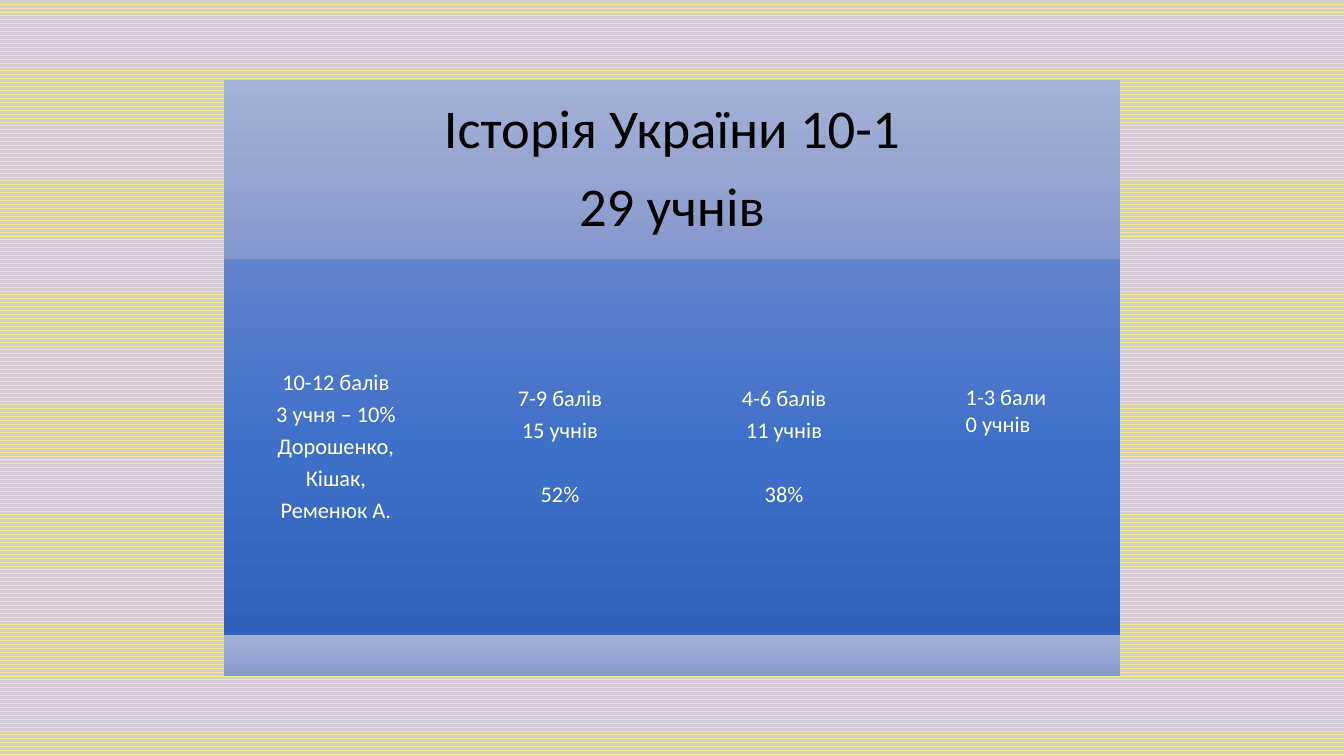
from copy import deepcopy
from dataclasses import dataclass

from pptx import Presentation
from pptx.dml.color import RGBColor
from pptx.enum.dml import MSO_PATTERN
from pptx.enum.shapes import MSO_SHAPE
from pptx.enum.text import MSO_ANCHOR, MSO_AUTO_SIZE, PP_ALIGN
from pptx.oxml.ns import qn
from pptx.shapes.base import BaseShape
from pptx.slide import Slide
from pptx.text.text import TextFrame
from pptx.util import Inches, Pt

BLACK = RGBColor(0x00, 0x00, 0x00)
WHITE = RGBColor(0xFF, 0xFF, 0xFF)
WAVE_YELLOW = RGBColor(0xFF, 0xE6, 0x99)
WAVE_GREY = RGBColor(0xD0, 0xCE, 0xCE)
PALE_BLUES = (RGBColor(0xA4, 0xB2, 0xD9), RGBColor(0x97, 0xA6, 0xD1), RGBColor(0x84, 0x97, 0xCE))
DEEP_BLUES = (RGBColor(0x61, 0x83, 0xCB), RGBColor(0x3E, 0x70, 0xCA), RGBColor(0x30, 0x62, 0xBB))

FONT = "Calibri"
TITLE_SIZE, BODY_SIZE = 39, 16
LINE_SPACING, SPACE_AFTER = 0.9, 0.35
BLANK_LINE = Pt(23.1)
PANEL_LEFT, PANEL_WIDTH = 2.22, 8.89


@dataclass(frozen=True)
class Box:
    left: float
    top: float
    width: float
    height: float


@dataclass(frozen=True)
class GradeColumn:
    text: str = ""
    share: str = ""


TITLE_BOX = Box(PANEL_LEFT, 0.79, PANEL_WIDTH, 1.78)
FOOTER_BOX = Box(PANEL_LEFT, 6.3, PANEL_WIDTH, 0.41)
LOWEST_GRADES_BOX = Box(9.48, 3.75, 1.01, 0.64)
COLUMNS_TOP, COLUMNS_HEIGHT = 2.57, 3.73
COLUMNS = (
    GradeColumn("10-12 балів\n3 учня – 10%\nДорошенко,\nКішак,\nРеменюк А."),
    GradeColumn("7-9 балів\n15 учнів", "52%"),
    GradeColumn("4-6 балів\n11 учнів", "38%"),
    GradeColumn(),
)


def place(shape: BaseShape, box: Box) -> None:
    shape.left, shape.top = Inches(box.left), Inches(box.top)
    shape.width, shape.height = Inches(box.width), Inches(box.height)


def fill_gradient(shape: BaseShape, colours: tuple[RGBColor, ...]) -> None:
    """Fill from top to bottom with evenly spaced colours."""
    shape.fill.gradient()
    shape.fill.gradient_angle = 270
    stop_list = shape.element.spPr.find(qn("a:gradFill")).find(qn("a:gsLst"))
    stop_list.insert(1, deepcopy(stop_list[0]))
    for index, (stop, colour) in enumerate(zip(shape.fill.gradient_stops, colours)):
        stop.position = index / (len(colours) - 1)
        stop.color.rgb = colour


def add_panel(slide: Slide, box: Box, colours: tuple[RGBColor, ...]) -> BaseShape:
    shape = slide.shapes.add_shape(MSO_SHAPE.RECTANGLE, 0, 0, 0, 0)
    place(shape, box)
    shape.shadow.inherit = False
    shape.line.fill.background()
    fill_gradient(shape, colours)
    return shape


def format_runs(frame: TextFrame, size: float, colour: RGBColor) -> None:
    for paragraph in frame.paragraphs:
        for run in paragraph.runs:
            run.font.name = FONT
            run.font.size = Pt(size)
            run.font.color.rgb = colour


def set_centred_text(frame: TextFrame, text: str, size: float, colour: RGBColor, inset: float) -> None:
    frame.text = text
    frame.word_wrap = True
    frame.auto_size = MSO_AUTO_SIZE.NONE
    frame.vertical_anchor = MSO_ANCHOR.MIDDLE
    frame.margin_left = frame.margin_right = Inches(inset)
    frame.margin_top = frame.margin_bottom = Inches(inset)
    for paragraph in frame.paragraphs:
        paragraph.alignment = PP_ALIGN.CENTER
        paragraph.line_spacing = LINE_SPACING
        paragraph.space_before = Pt(0)
        paragraph.space_after = Pt(size * SPACE_AFTER)
    format_runs(frame, size, colour)


def add_grade_column(slide: Slide, column: GradeColumn, box: Box) -> None:
    panel = add_panel(slide, box, DEEP_BLUES)
    if not column.text:
        return
    text = f"{column.text}\n{column.share}" if column.share else column.text
    set_centred_text(panel.text_frame, text, BODY_SIZE, WHITE, 0.07)
    if column.share:
        panel.text_frame.paragraphs[-1].space_before = BLANK_LINE


def main() -> None:
    presentation = Presentation()
    presentation.slide_width, presentation.slide_height = Inches(13.33), Inches(7.5)
    slide = presentation.slides.add_slide(presentation.slide_layouts[5])

    # Background
    background = slide.background.fill
    background.patterned()
    background.pattern = MSO_PATTERN.WAVE
    background.fore_color.rgb = WAVE_YELLOW
    background.back_color.rgb = WAVE_GREY

    # Title band
    title = slide.shapes.title
    place(title, TITLE_BOX)
    fill_gradient(title, PALE_BLUES)
    set_centred_text(title.text_frame, "Історія України 10-1\n29 учнів", TITLE_SIZE, BLACK, 0.16)

    # Grade columns
    column_width = PANEL_WIDTH / len(COLUMNS)
    for index, column in enumerate(COLUMNS):
        left = PANEL_LEFT + index * column_width
        add_grade_column(slide, column, Box(left, COLUMNS_TOP, column_width, COLUMNS_HEIGHT))

    # Footer band
    add_panel(slide, FOOTER_BOX, PALE_BLUES)

    # Lowest grades
    lowest_grades = slide.shapes.add_textbox(0, 0, 0, 0)
    place(lowest_grades, LOWEST_GRADES_BOX)
    frame = lowest_grades.text_frame
    frame.text = "1-3 бали\n0 учнів"
    frame.word_wrap = False
    frame.auto_size = MSO_AUTO_SIZE.SHAPE_TO_FIT_TEXT
    format_runs(frame, BODY_SIZE, WHITE)

    presentation.save("out.pptx")


if __name__ == "__main__":
    main()
